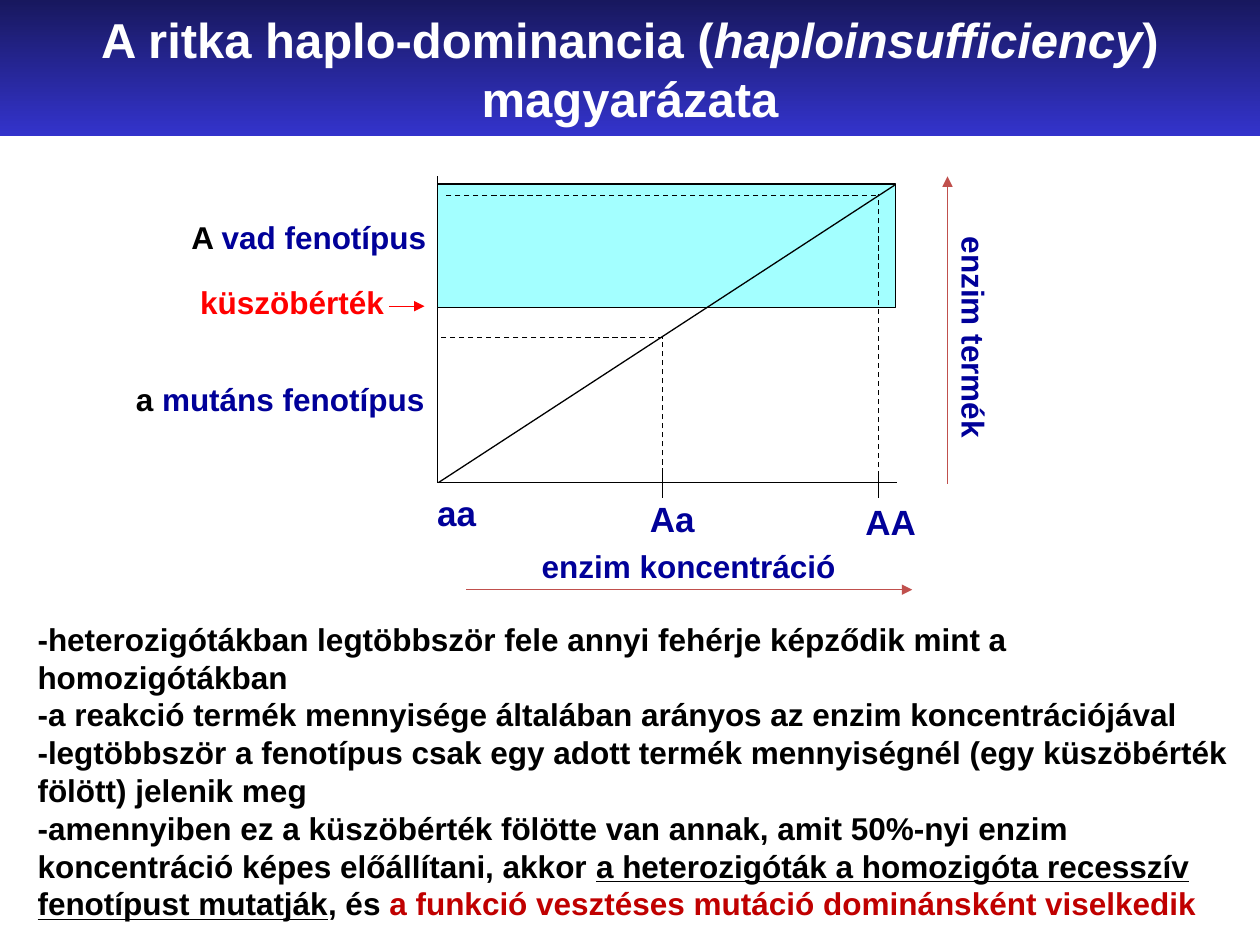
from lxml import etree
from pptx import Presentation
from pptx.dml.color import RGBColor
from pptx.enum.dml import MSO_LINE
from pptx.enum.shapes import MSO_CONNECTOR, MSO_SHAPE
from pptx.enum.text import MSO_ANCHOR, MSO_AUTO_SIZE, PP_ALIGN
from pptx.oxml.ns import qn
from pptx.util import Pt

PX = 9144  # 100 px to the inch
RECT = MSO_SHAPE.RECTANGLE
STRAIGHT = MSO_CONNECTOR.STRAIGHT
DASH = MSO_LINE.DASH
MIDDLE = MSO_ANCHOR.MIDDLE
CENTER = PP_ALIGN.CENTER
FIT_SHAPE = MSO_AUTO_SIZE.SHAPE_TO_FIT_TEXT
C = {
    "black": "000000", "white": "FFFFFF", "navy": "000099", "red": "FF0000",
    "dark_red": "C00000", "brick": "C0504D", "cyan": "A3FFFF",
    "title_top": "18185E", "title_bottom": "3333CC",
}

prs = Presentation()
prs.slide_width, prs.slide_height = 1000 * PX, 750 * PX
s = prs.slides.add_slide(prs.slide_layouts[6])


def add_runs(p, size, runs):
    """Each run is (text, colour, extra font values)."""
    for text, color, extra in runs:
        r = p.add_run()
        r.text = text
        values = {"name": "Arial", "size": Pt(size), "bold": True, **extra}
        for key, value in values.items():
            setattr(r.font, key, value)
        r.font.color.rgb = RGBColor.from_string(C[color])


def add_line(x1, y1, x2, y2, color="black", dash=None, arrow=False):
    ln = s.shapes.add_connector(STRAIGHT, x1 * PX, y1 * PX, x2 * PX, y2 * PX)
    ln.line.width = Pt(0.75)
    ln.line.color.rgb = RGBColor.from_string(C[color])
    if dash:
        ln.line.dash_style = dash
    if arrow:
        tail = etree.SubElement(ln.line._get_or_add_ln(), qn("a:tailEnd"))
        tail.set("type", "triangle")
    etree.SubElement(ln._element.spPr, qn("a:effectLst"))


# Axes
left, base = 348, 383
x_het, x_hom = 526, 697
add_line(347, 140, 347, base)
add_line(left, base, 712, base)

# Wild phenotype zone above the threshold
sp = s.shapes.add_shape(RECT, 347 * PX, 146 * PX, 364 * PX, 98 * PX)
sp.shadow.inherit = False
sp.fill.solid()
sp.fill.fore_color.rgb = RGBColor.from_string(C["cyan"])
sp.line.color.rgb = RGBColor.from_string(C["black"])
sp.line.width = Pt(0.75)

# Product line, axis ticks and dashed guides
add_line(left, base, 710, 147)
for x in (x_het, x_hom):
    add_line(x, 375, x, 395)
for guide in [
    (x_het, base, x_het, 268), (x_het, 268, left, 268),
    (x_hom, 378, x_hom, 154), (695, 155, 352, 155),
]:
    add_line(*guide, dash=DASH)

# Arrows: threshold, concentration, product
for x1, y1, x2, y2, color in [
    (309, 243, 337, 243, "red"),
    (370, 468, 724, 468, "brick"),
    (752, 384, 752, 140, "brick"),
]:
    add_line(x1, y1, x2, y2, color, arrow=True)

# Labels: x, y, width, height, size, rotation, runs
for x, y, w, h, size, rotation, runs in [
    (149, 220, 166, 40, 18, 0, [("küszöbérték", "red", {})]),
    (142, 168, 210, 40, 18, 0, [("A ", "black", {}), ("vad fenotípus", "navy", {})]),
    (98, 297, 256, 40, 18, 0, [("a", "black", {}), (" mutáns fenotípus", "navy", {})]),
    (337, 385, 52, 43, 20, 0, [("aa", "navy", {})]),
    (506, 390, 57, 43, 20, 0, [("Aa", "navy", {})]),
    (677, 392, 61, 43, 20, 0, [("AA", "navy", {})]),
    (420, 429, 258, 40, 18, 0, [("enzim koncentráció", "navy", {})]),
    (682, 249, 182, 40, 18, 90, [("enzim termék", "navy", {})]),
]:
    sp = s.shapes.add_textbox(x * PX, y * PX, w * PX, h * PX)
    sp.rotation = rotation
    tf = sp.text_frame
    tf.word_wrap = False
    tf.auto_size = FIT_SHAPE
    add_runs(tf.paragraphs[0], size, runs)

# Explanation
sp = s.shapes.add_textbox(20 * PX, 487 * PX, 967 * PX, 250 * PX)
tf = sp.text_frame
tf.word_wrap = True
tf.auto_size = FIT_SHAPE
for i, runs in enumerate([
    [("-heterozigótákban legtöbbször fele annyi fehérje képződik mint a "
      "homozigótákban", "black", {})],
    [("-a reakció termék mennyisége általában arányos az enzim "
      "koncentrációjával", "black", {})],
    [("-legtöbbször a fenotípus csak egy adott termék mennyiségnél "
      "(egy küszöbérték fölött) jelenik meg", "black", {})],
    [("-amennyiben ez a küszöbérték fölötte van annak, amit 50%-nyi enzim "
      "koncentráció képes előállítani, akkor ", "black", {}),
     ("a heterozigóták a homozigóta recesszív fenotípust mutatják", "black",
      {"underline": True}),
     (", és ", "black", {}),
     ("a funkció vesztéses mutáció dominánsként viselkedik", "dark_red", {})],
]):
    p = tf.add_paragraph() if i else tf.paragraphs[0]
    add_runs(p, 18, runs)

# Title band
sp = s.shapes.add_shape(RECT, 0, 0, 1000 * PX, 108 * PX)
sp.shadow.inherit = False
sp.line.fill.background()
sp.fill.gradient()
sp.fill.gradient_angle = 270
for stop, color in zip(sp.fill.gradient_stops, ("title_top", "title_bottom")):
    stop.color.rgb = RGBColor.from_string(C[color])
tf = sp.text_frame
tf.word_wrap = True
tf.vertical_anchor = MIDDLE
p = tf.paragraphs[0]
p.alignment = CENTER
add_runs(p, 28, [
    ("A ritka haplo-dominancia (", "white", {}),
    ("haploinsufficiency", "white", {"italic": True}),
    (")", "white", {}),
])
p.add_line_break()
add_runs(p, 28, [("magyarázata", "white", {})])

prs.save("out.pptx")
